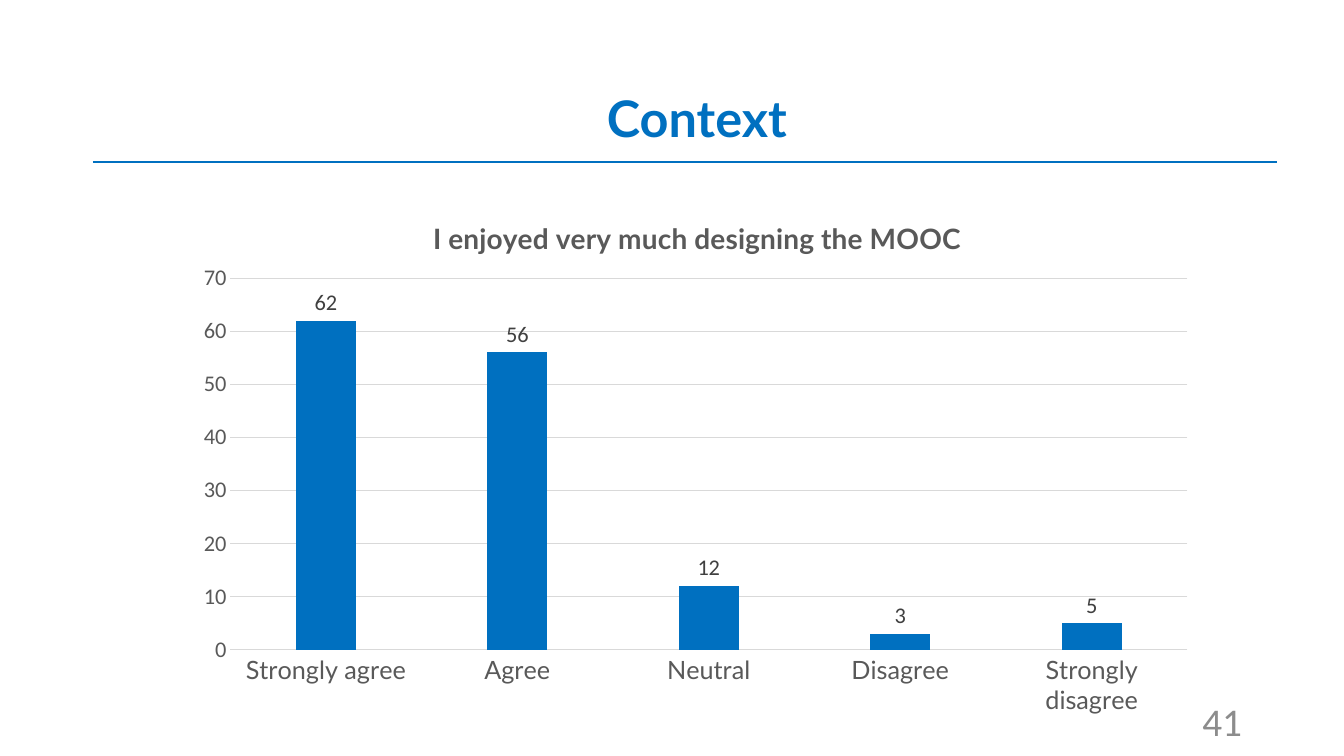
import pptx
import pptx.chart.data
import pptx.dml.color
import pptx.enum.chart
import pptx.enum.shapes
import pptx.enum.text
import pptx.oxml
import pptx.oxml.ns
import pptx.util

BLUE, GRAY, RULE = "0070C0", "595959", "D9D9D9"
ALIGN = pptx.enum.text.PP_ALIGN


def px(n):
    return pptx.util.Emu(round(n * 914400 / 100.8))


def color(code):
    return pptx.dml.color.RGBColor.from_string(code)


class Deck:
    """Holds the style and the current slide, and draws each kind of element."""

    def __init__(self):
        self.prs = pptx.Presentation()
        self.prs.slide_width, self.prs.slide_height = px(1344), px(756)
        self.slide = self.prs.slides.add_slide(self.prs.slide_layouts[6])

    def style(self, font, size, code, face="Calibri", bold=False):
        font.name, font.size, font.bold = face, pptx.util.Pt(size), bold
        font.color.rgb = color(code)

    def text(self, box, words, align, *look):
        frame = self.slide.shapes.add_textbox(*map(px, box)).text_frame
        frame.word_wrap = True
        frame.vertical_anchor = pptx.enum.text.MSO_ANCHOR.MIDDLE
        frame.text = words
        line = frame.paragraphs[0]
        line.alignment = align
        self.style(line.runs[0].font, *look)

    def line(self, left, right, y):
        kind = pptx.enum.shapes.MSO_CONNECTOR.STRAIGHT
        rule = self.slide.shapes.add_connector(kind, px(left), px(y), px(right), px(y))
        rule.line.color.rgb = color(BLUE)
        rule.line.width = pptx.util.Pt(2)
        rule._element.spPr.append(pptx.oxml.parse_xml(
            "<a:effectLst %s/>" % pptx.oxml.ns.nsdecls("a")))

    def place(self, node, index, **spots):
        for old in node.xpath("./c:layout"):
            node.remove(old)
        tags = "".join(f'<c:{tag} val="{val}"/>' for tag, val in spots.items())
        node.insert(index, pptx.oxml.parse_xml(
            "<c:layout %s><c:manualLayout>%s</c:manualLayout></c:layout>"
            % (pptx.oxml.ns.nsdecls("c"), tags)))

    def axis(self, axis, size, face):
        none = pptx.enum.chart.XL_TICK_MARK.NONE
        axis.major_tick_mark = axis.minor_tick_mark = none
        self.style(axis.tick_labels.font, size, GRAY, face)

    def hair(self, line):
        line.color.rgb = color(RULE)
        line.width = pptx.util.Pt(0.75)

    def chart(self, box, title, votes):
        data = pptx.chart.data.CategoryChartData()
        data.categories = list(votes)
        data.add_series("Series 1", list(votes.values()))
        kind = pptx.enum.chart.XL_CHART_TYPE.COLUMN_CLUSTERED
        chart = self.slide.shapes.add_chart(kind, *map(px, box), data).chart
        self.style(chart.font, 10, "000000")
        chart.has_legend = False

        head = chart.chart_title.text_frame
        head.text = title
        self.style(head.paragraphs[0].runs[0].font, 20, GRAY, "Lato", True)
        self.place(chart.chart_title._element, 1,
                   xMode="edge", yMode="edge", x=0.24, y=0.05)
        self.place(chart.element.xpath(".//c:plotArea")[0], 0,
                   layoutTarget="inner", xMode="edge", yMode="edge",
                   x=0.047, y=0.171, w=0.934, h=0.69)

        cats, vals = chart.category_axis, chart.value_axis
        self.axis(cats, 18, "Lato")
        self.hair(cats.format.line)
        self.axis(vals, 16, "Calibri")
        vals.format.line.fill.background()
        vals.minimum_scale, vals.maximum_scale, vals.major_unit = 0, 70, 10
        self.hair(vals.major_gridlines.format.line)

        plot = chart.plots[0]
        plot.vary_by_categories = False
        plot.gap_width, plot.overlap = 219, -27
        bars = plot.series[0]
        bars.format.fill.solid()
        bars.format.fill.fore_color.rgb = color(BLUE)
        tags = bars.data_labels
        tags.show_value = True
        tags.position = pptx.enum.chart.XL_LABEL_POSITION.OUTSIDE_END
        self.style(tags.font, 16, "404040")


def main():
    deck = Deck()
    deck.text((71, 44, 1252, 146), "Context", ALIGN.CENTER, 36, BLUE, "Lato", True)
    deck.line(93, 1277, 162)
    deck.text((950, 701, 302, 40), "41", ALIGN.RIGHT, 28, "8C8C8C")
    deck.chart((182, 186, 1025, 539), "I enjoyed very much designing the MOOC", {
        "Strongly agree": 62, "Agree": 56, "Neutral": 12,
        "Disagree": 3, "Strongly disagree": 5})
    deck.prs.save("out.pptx")


if __name__ == "__main__":
    main()
